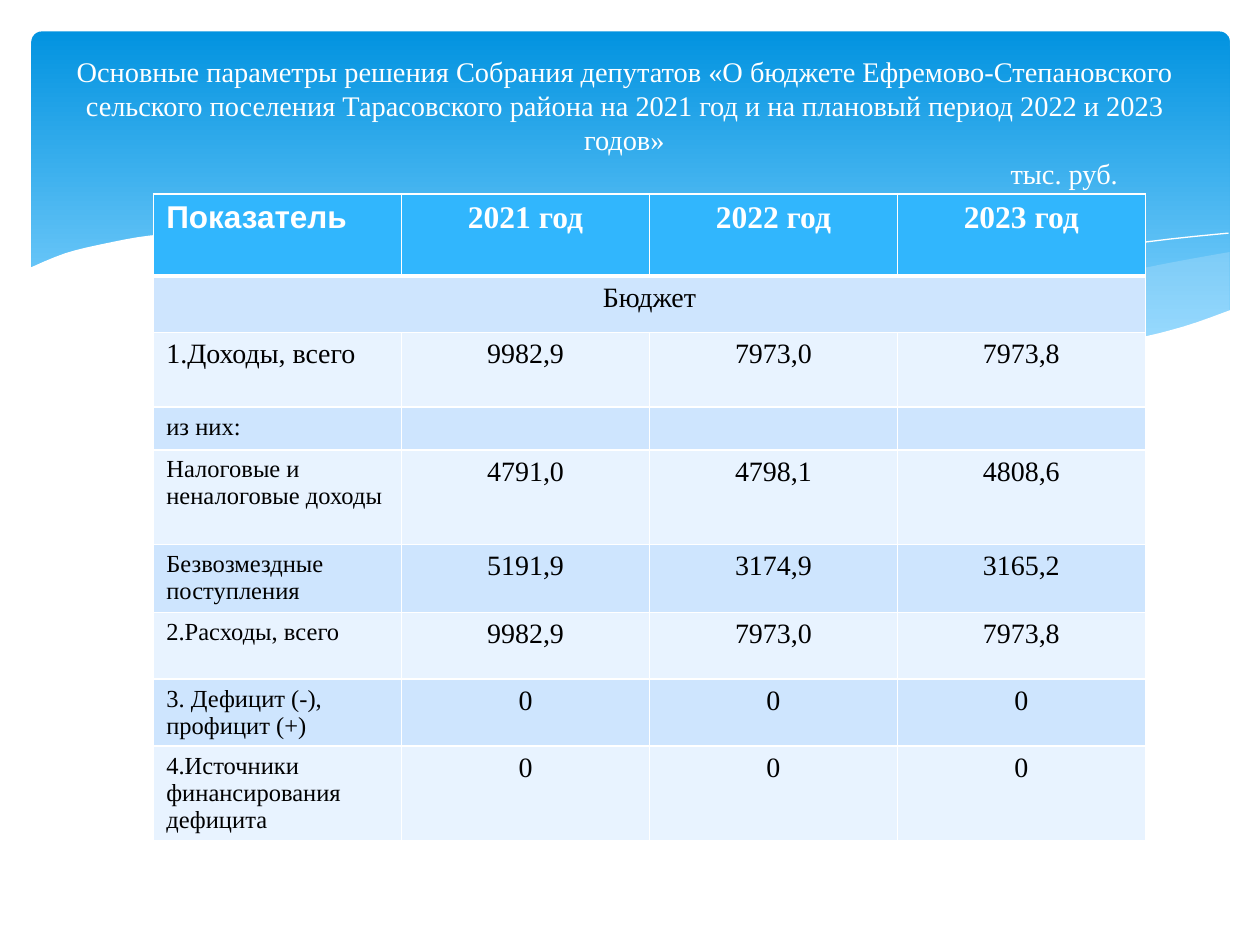
from dataclasses import dataclass

from lxml.etree import SubElement
from pptx import Presentation
from pptx.dml.color import RGBColor
from pptx.enum.shapes import MSO_SHAPE
from pptx.enum.text import MSO_ANCHOR, PP_ALIGN
from pptx.oxml.ns import qn
from pptx.util import Inches, Pt

COLUMNS, ROWS = 100, 75
UNIT = Inches(0.1)
Point = tuple[float, float]


@dataclass(frozen=True)
class Theme:
    banner_top: str = "0293E0"
    banner_bottom: str = "83D3FE"
    wave: str = "C6E7FC"
    white: str = "FFFFFF"
    ink: str = "000000"
    header: str = "31B6FD"
    band_dark: str = "CEE5FE"
    band_light: str = "E8F3FF"
    serif: str = "Times New Roman"
    sans: str = "Arial"
    title_size: float = 16.2
    header_size: float = 18
    body_size: float = 16
    label_size: float = 14
    rule: float = 1
    header_rule: float = 3


@dataclass(frozen=True)
class Wave:
    curves: list[list[Point]]
    alpha: int | None = None
    color: str | None = None


@dataclass(frozen=True)
class BudgetRow:
    label: str
    values: tuple[str, ...]
    height: float
    label_size: float


THEME = Theme()

WAVES = [
    Wave([
        [(97.6, 20), (92.1, 21), (86.1, 22.3), (77.9, 24.2), (72.9, 25.3), (66.1, 26.5)],
        [(66.1, 26.5), (71.9, 27.1), (76.9, 27.7), (81.4, 27.8), (86.3, 27.5),
         (90.5, 26.9), (94.2, 25.9), (97.6, 24.7)],
    ], 29, THEME.wave),
    Wave([
        [(89.3, 27.3), (83.7, 26.5), (77.5, 25.4), (70.6, 24), (62.9, 22.2), (56.9, 20.8),
         (51.4, 19.8), (44.2, 18.9), (38, 18.5), (32.8, 18.7), (28.6, 19.1)],
        [(28.6, 19.1), (34.2, 19.9), (40.4, 21.1), (49.1, 23.2), (56.6, 24.8), (63.4, 26.1),
         (69.5, 27), (74.8, 27.6), (80.7, 27.8), (85.7, 27.7), (89.3, 27.3)],
    ], 40, THEME.wave),
    Wave([[(30.9, 19.5), (35.3, 18.9), (41.6, 18.7), (48.9, 19), (55.6, 19.7),
           (63.6, 20.8), (72.7, 22.6), (79.5, 24.1), (90.7, 27.2)]]),
    Wave([[(61.3, 25.7), (67.2, 24.1), (74.8, 22.3), (83.6, 20.4), (91, 19.2), (97.5, 18.5)]]),
    Wave([
        [(97.7, 24.6), (94, 25.9), (89.9, 26.9), (85, 27.5), (80.9, 27.7), (76.1, 27.5),
         (70.8, 27), (64.8, 26.2), (57.9, 25), (50.3, 23.3), (41.8, 21.3), (34, 19.7),
         (27.1, 18.8), (21.1, 18.4), (16.1, 18.4), (11.9, 18.7), (8.5, 19.3), (5.2, 20.1),
         (2.3, 21.3)],
        [(2.3, 32.9), (97.7, 32.9)],
    ], 100, THEME.white),
]

YEARS = ("2021 год", "2022 год", "2023 год")
BUDGET = [
    BudgetRow("Показатель", YEARS, 6.5, THEME.header_size),
    BudgetRow("Бюджет", (), 4.5, THEME.body_size),
    BudgetRow("1.Доходы, всего", ("9982,9", "7973,0", "7973,8"), 5.9, THEME.body_size),
    BudgetRow("из них:", ("", "", ""), 3.4, THEME.label_size),
    BudgetRow("Налоговые и неналоговые доходы", ("4791,0", "4798,1", "4808,6"), 7.5, THEME.label_size),
    BudgetRow("Безвозмездные поступления", ("5191,9", "3174,9", "3165,2"), 5.4, THEME.label_size),
    BudgetRow("2.Расходы, всего", ("9982,9", "7973,0", "7973,8"), 5.3, THEME.label_size),
    BudgetRow("3. Дефицит (-), профицит (+)", ("0",) * 3, 5.3, THEME.label_size),
    BudgetRow("4.Источники финансирования дефицита", ("0",) * 3, 7.5, THEME.label_size),
]


def grid(*cells: float) -> list[int]:
    return [round(cell * UNIT) for cell in cells]


def rgb(color: str) -> RGBColor:
    return RGBColor.from_string(color)


def smooth(knots: list[Point], steps: int = 4) -> list[Point]:
    if len(knots) < 3:
        return knots
    padded = [knots[0], *knots, knots[-1]]
    curve = [knots[0]]
    for a, b, c, d in zip(padded, padded[1:], padded[2:], padded[3:]):
        for step in range(1, steps + 1):
            t = step / steps
            curve.append(tuple(
                (2 * q + (r - p) * t + (2 * p - 5 * q + 4 * r - s) * t**2
                 + (3 * q - p - 3 * r + s) * t**3) / 2
                for p, q, r, s in zip(a, b, c, d)))
    return curve


def draw_banner(shapes) -> None:
    banner = shapes.add_shape(MSO_SHAPE.ROUNDED_RECTANGLE, *grid(2.5, 2.5, 95.1, 27))
    banner.adjustments[0] = 0.03
    banner.shadow.inherit = False
    banner.line.fill.background()
    banner.fill.gradient()
    banner.fill.gradient_angle = 270
    stops = zip(banner.fill.gradient_stops, (THEME.banner_top, THEME.banner_bottom), (0, 0.9))
    for stop, color, position in stops:
        stop.color.rgb = rgb(color)
        stop.position = position


def draw_wave(shapes, wave: Wave) -> None:
    points = [grid(*point) for knots in wave.curves for point in smooth(knots)]
    builder = shapes.build_freeform(*points[0])
    builder.add_line_segments(points[1:], close=wave.color is not None)
    outline = builder.convert_to_shape()
    outline.shadow.inherit = False
    if wave.color is None:
        outline.fill.background()
        outline.line.color.rgb = rgb(THEME.white)
        outline.line.width = Pt(0)
        return
    outline.line.fill.background()
    outline.fill.solid()
    outline.fill.fore_color.rgb = rgb(wave.color)
    if wave.alpha < 100:
        tint = outline.fill._xPr.find(f".//{qn('a:srgbClr')}")
        SubElement(tint, qn("a:alpha"), val=str(wave.alpha * 1000))


def style_paragraph(paragraph, size: float, color: str, align=PP_ALIGN.CENTER,
                    face: str = THEME.serif, bold: bool = False) -> None:
    paragraph.alignment = align
    paragraph.font.size = Pt(size)
    paragraph.font.name = face
    paragraph.font.bold = bold
    paragraph.font.color.rgb = rgb(color)


def style_cell(cell, fill: str, bottom: float) -> None:
    properties = cell._tc.get_or_add_tcPr()
    for side, width in (("L", THEME.rule), ("R", THEME.rule), ("T", THEME.rule), ("B", bottom)):
        border = SubElement(properties, qn(f"a:ln{side}"), w=str(Pt(width)))
        SubElement(SubElement(border, qn("a:solidFill")), qn("a:srgbClr"), val=THEME.white)
    cell.fill.solid()
    cell.fill.fore_color.rgb = rgb(fill)


def draw_budget(shapes) -> None:
    height = sum(row.height for row in BUDGET)
    table = shapes.add_table(len(BUDGET), len(YEARS) + 1, *grid(12.2, 15.4, 78.7, height)).table
    for r, row in enumerate(BUDGET):
        table.rows[r].height = grid(row.height)[0]
        header = r == 0
        fill = THEME.header if header else (THEME.band_dark if r % 2 else THEME.band_light)
        for cell in table.rows[r].cells:
            style_cell(cell, fill, THEME.header_rule if header else THEME.rule)
        if not row.values:
            table.cell(r, 0).merge(table.cell(r, len(YEARS)))
        for c, text in enumerate((row.label, *row.values)):
            cell = table.cell(r, c)
            cell.text = text
            size = row.label_size if c == 0 or not text else max(row.label_size, THEME.body_size)
            style_paragraph(
                cell.text_frame.paragraphs[0], size,
                THEME.white if header else THEME.ink,
                PP_ALIGN.LEFT if c == 0 and row.values else PP_ALIGN.CENTER,
                THEME.sans if header and c == 0 else THEME.serif, header)


def draw_title(shapes) -> None:
    frame = shapes.add_textbox(*grid(5, 5.5, 89.1, 8.4)).text_frame
    frame.word_wrap = True
    frame.vertical_anchor = MSO_ANCHOR.MIDDLE
    heading, unit = frame.paragraphs[0], frame.add_paragraph()
    heading.text = ("Основные параметры решения Собрания депутатов «О бюджете "
                    "Ефремово-Степановского сельского поселения Тарасовского района "
                    "на 2021 год и на плановый период 2022 и 2023 годов»")
    unit.text = "тыс. руб."
    style_paragraph(heading, THEME.title_size, THEME.white)
    style_paragraph(unit, THEME.title_size, THEME.white, PP_ALIGN.RIGHT)
    unit._p.get_or_add_pPr().set("marR", str(grid(4.4)[0]))


def main() -> None:
    deck = Presentation()
    deck.slide_width, deck.slide_height = grid(COLUMNS, ROWS)
    shapes = deck.slides.add_slide(deck.slide_layouts[6]).shapes
    draw_banner(shapes)
    for wave in WAVES:
        draw_wave(shapes, wave)
    draw_budget(shapes)
    draw_title(shapes)
    deck.save("out.pptx")


if __name__ == "__main__":
    main()
